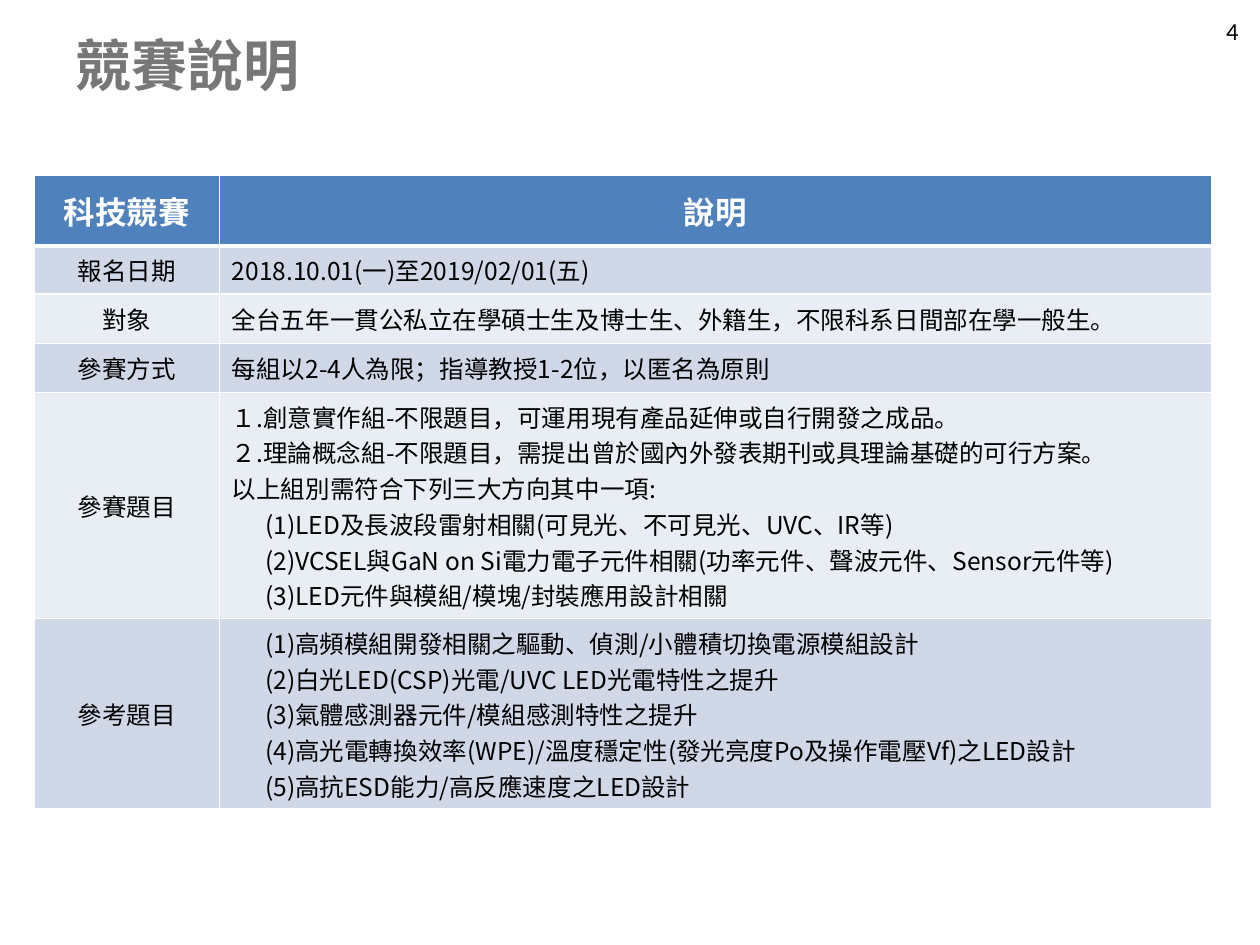
import pptx
import pptx.util
import pptx.dml.color
import pptx.enum.text
import pptx.oxml
import pptx.oxml.ns
from pptx.util import Cm

RGBColor = pptx.dml.color.RGBColor
ALIGN = pptx.enum.text.PP_ALIGN
ANCHOR = pptx.enum.text.MSO_ANCHOR
BLACK = RGBColor(0x00, 0x00, 0x00)
WHITE = RGBColor(0xFF, 0xFF, 0xFF)
GRAY = RGBColor(0x77, 0x77, 0x77)
HEADER_BLUE = RGBColor(0x4F, 0x81, 0xBD)
BANDS = (RGBColor(0xD0, 0xD8, 0xE8), RGBColor(0xE9, 0xED, 0xF4))
CJK_FONT = "Noto Sans CJK SC"
ITEM_INDENT = Cm(0.67)

HEADER = ("科技競賽", "說明")
ROWS = [
    ("報名日期", ["2018.10.01(一)至2019/02/01(五)"]),
    ("對象", ["全台五年一貫公私立在學碩士生及博士生、外籍生，不限科系日間部在學一般生。"]),
    ("參賽方式", ["每組以2-4人為限；指導教授1-2位，以匿名為原則"]),
    ("參賽題目", [
        "１.創意實作組-不限題目，可運用現有產品延伸或自行開發之成品。",
        "２.理論概念組-不限題目，需提出曾於國內外發表期刊或具理論基礎的可行方案。",
        "以上組別需符合下列三大方向其中一項:",
        "(1)LED及長波段雷射相關(可見光、不可見光、UVC、IR等)",
        "(2)VCSEL與GaN on Si電力電子元件相關(功率元件、聲波元件、Sensor元件等)",
        "(3)LED元件與模組/模塊/封裝應用設計相關",
    ]),
    ("參考題目", [
        "(1)高頻模組開發相關之驅動、偵測/小體積切換電源模組設計",
        "(2)白光LED(CSP)光電/UVC LED光電特性之提升",
        "(3)氣體感測器元件/模組感測特性之提升",
        "(4)高光電轉換效率(WPE)/溫度穩定性(發光亮度Po及操作電壓Vf)之LED設計",
        "(5)高抗ESD能力/高反應速度之LED設計",
    ]),
]
ROW_HEIGHTS = [Cm(1.42), Cm(0.97), Cm(0.99), Cm(0.99), Cm(4.56), Cm(3.84)]


def write_text(paragraph, text, size=14, color=BLACK, bold=False, align=ALIGN.LEFT,
               font_name=CJK_FONT):
    """Write one formatted run, indenting numbered items."""
    paragraph.alignment = align
    if text.startswith("("):
        paragraph._p.get_or_add_pPr().set("marL", str(ITEM_INDENT))
    run = paragraph.add_run()
    run.text = text
    run.font.size = pptx.util.Pt(size)
    run.font.bold = bold
    run.font.color.rgb = color
    run.font.name = font_name
    east_asian = pptx.oxml.parse_xml(
        f'<a:ea {pptx.oxml.ns.nsdecls("a")} typeface="{CJK_FONT}"/>')
    run.font._element.find(pptx.oxml.ns.qn("a:latin")).addnext(east_asian)


def add_label(slide, box, text, anchor=ANCHOR.TOP, **text_format):
    """Add a one-line text box that fills the given box."""
    frame = slide.shapes.add_textbox(*box).text_frame
    frame.word_wrap = True
    frame.vertical_anchor = anchor
    write_text(frame.paragraphs[0], text, **text_format)


def style_cell(cell, fill, top=1, bottom=1):
    """Fill a cell and draw its white borders."""
    cell.fill.solid()
    cell.fill.fore_color.rgb = fill
    properties = cell._tc.get_or_add_tcPr()
    widths = {"lnL": 1, "lnR": 1, "lnT": top, "lnB": bottom}
    for index, (side, width) in enumerate(widths.items()):
        properties.insert(index, pptx.oxml.parse_xml(
            f'<a:{side} {pptx.oxml.ns.nsdecls("a")} w="{pptx.util.Pt(width)}">'
            f'<a:solidFill><a:srgbClr val="{WHITE}"/></a:solidFill></a:{side}>'))


def add_rules_table(slide, box):
    """Add the competition rules table in the given box."""
    width = box[2]
    label_width = Cm(3.72)
    table = slide.shapes.add_table(len(ROWS) + 1, 2, *box).table
    table.columns[0].width = label_width
    table.columns[1].width = width - label_width
    for row, height in zip(table.rows, ROW_HEIGHTS):
        row.height = height
    for column, text in enumerate(HEADER):
        cell = table.cell(0, column)
        cell.vertical_anchor = ANCHOR.MIDDLE
        style_cell(cell, HEADER_BLUE, bottom=3)
        write_text(cell.text_frame.paragraphs[0], text, size=18, color=WHITE,
                   bold=True, align=ALIGN.CENTER)
    for index, (label, lines) in enumerate(ROWS, start=1):
        label_cell, detail_cell = table.cell(index, 0), table.cell(index, 1)
        for cell in (label_cell, detail_cell):
            style_cell(cell, BANDS[(index - 1) % 2], top=3 if index == 1 else 1)
        label_cell.vertical_anchor = ANCHOR.MIDDLE
        detail_cell.vertical_anchor = ANCHOR.MIDDLE if len(lines) == 1 else ANCHOR.TOP
        write_text(label_cell.text_frame.paragraphs[0], label, align=ALIGN.CENTER)
        frame = detail_cell.text_frame
        for number, line in enumerate(lines):
            paragraph = frame.add_paragraph() if number else frame.paragraphs[0]
            write_text(paragraph, line)


def main():
    """Build and save the slide."""
    presentation = pptx.Presentation()
    presentation.slide_width, presentation.slide_height = Cm(25.4), Cm(19.05)
    slide = presentation.slides.add_slide(presentation.slide_layouts[6])
    add_label(slide, (Cm(19.3), Cm(0.2), Cm(5.92), Cm(1.32)), "4",
              align=ALIGN.RIGHT, font_name="Calibri")
    add_label(slide, (Cm(1.27), Cm(0.76), Cm(22.86), Cm(1.07)), "競賽說明",
              anchor=ANCHOR.MIDDLE, size=32, color=GRAY, bold=True)
    add_rules_table(slide, (Cm(0.7), Cm(3.54), Cm(23.72), sum(ROW_HEIGHTS)))
    presentation.save("out.pptx")


if __name__ == "__main__":
    main()
